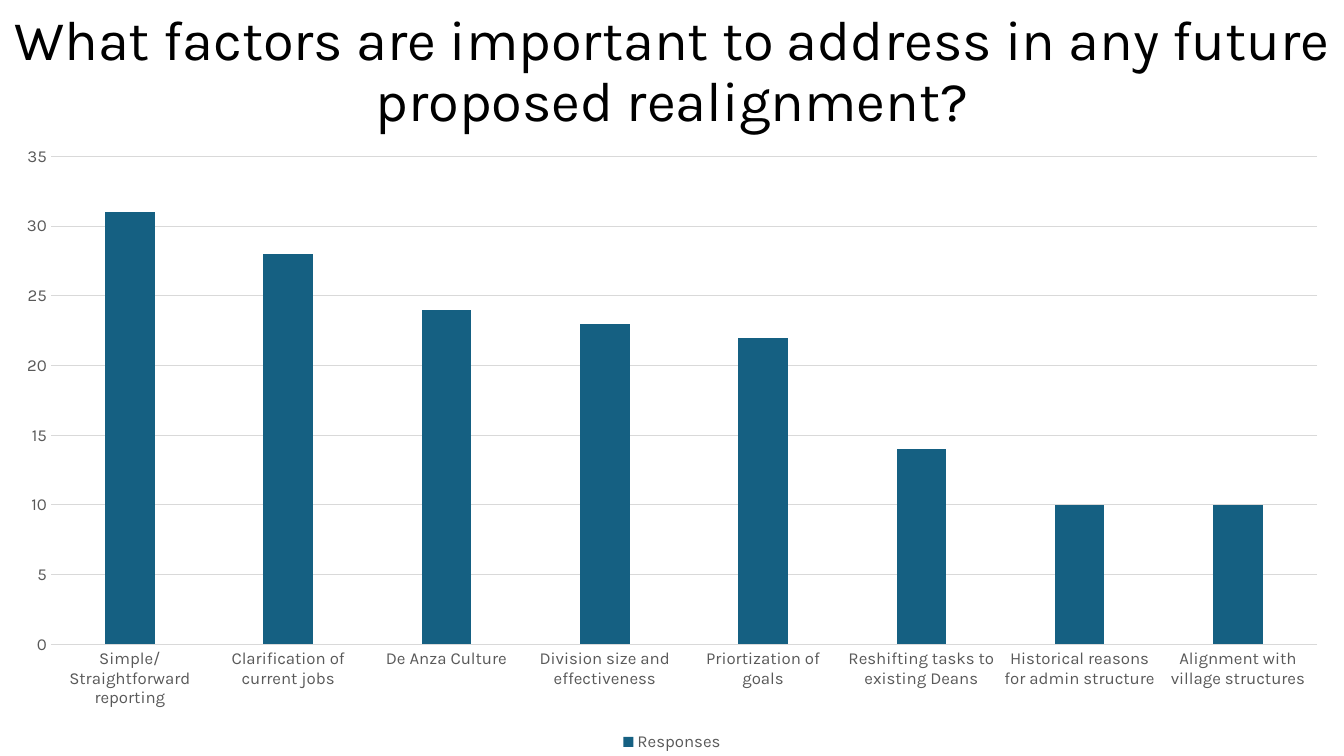
from lxml import etree
from pptx import Presentation
from pptx.chart.data import CategoryChartData
from pptx.dml.color import RGBColor
from pptx.enum.chart import XL_CHART_TYPE as ChartType
from pptx.enum.chart import XL_LEGEND_POSITION as LegendPosition
from pptx.enum.chart import XL_TICK_MARK as TickMark
from pptx.enum.text import MSO_ANCHOR as Anchor
from pptx.enum.text import PP_ALIGN as Align
from pptx.util import Inches, Pt

WIDTH, HEIGHT = 13.33, 7.5
CHART_TOP = 1.33
RESPONSES = {
    "Simple/Straightforward reporting": 31,
    "Clarification of current jobs": 28,
    "De Anza Culture": 24,
    "Division size and effectiveness": 23,
    "Priortization of goals": 22,
    "Reshifting tasks to existing Deans": 14,
    "Historical reasons for admin structure": 10,
    "Alignment with village structures": 10,
}


def color(value):
    return RGBColor.from_string(value)


class SlideBuilder:
    """Holds the style and the current slide, and adds its elements."""

    font_name = "Karla"
    title_color = "000000"
    label_color = "595959"
    line_color = "D9D9D9"
    bar_color = "156082"

    def __init__(self, slide):
        self.slide = slide

    def style_font(self, font, size, font_color):
        font.name = self.font_name
        font.size = Pt(size)
        font.bold = False
        font.color.rgb = color(font_color)

    def style_line(self, line):
        line.color.rgb = color(self.line_color)
        line.width = Pt(0.75)

    def add_title(self, text, left, top, width, height):
        shape = self.slide.shapes.add_textbox(
            Inches(left), Inches(top), Inches(width), Inches(height))
        frame = shape.text_frame
        frame.word_wrap = True
        frame.vertical_anchor = Anchor.MIDDLE
        frame.text = text
        paragraph = frame.paragraphs[0]
        paragraph.alignment = Align.CENTER
        paragraph.line_spacing = 0.9
        self.style_font(paragraph.runs[0].font, 40, self.title_color)

    def add_column_chart(self, name, values, left, top, width, height):
        data = CategoryChartData()
        data.categories = list(values)
        data.add_series(name, list(values.values()))
        chart = self.slide.shapes.add_chart(
            ChartType.COLUMN_CLUSTERED, Inches(left), Inches(top),
            Inches(width), Inches(height), data).chart
        self.style_font(chart.font, 10, self.title_color)
        chart.has_title = False
        chart.has_legend = True
        chart.legend.position = LegendPosition.BOTTOM
        chart.legend.include_in_layout = False
        self.style_font(chart.legend.font, 12, self.label_color)

        for axis in (chart.category_axis, chart.value_axis):
            axis.major_tick_mark = TickMark.NONE
            axis.minor_tick_mark = TickMark.NONE
            self.style_font(axis.tick_labels.font, 12, self.label_color)
        self.style_line(chart.category_axis.format.line)
        value_axis = chart.value_axis
        value_axis.minimum_scale = 0
        value_axis.maximum_scale = 35
        value_axis.major_unit = 5
        value_axis.format.line.fill.background()
        self.style_line(value_axis.major_gridlines.format.line)

        plot = chart.plots[0]
        plot.gap_width = 219
        plot.overlap = -27
        plot.vary_by_categories = False
        bars = plot.series[0].format
        bars.fill.solid()
        bars.fill.fore_color.rgb = color(self.bar_color)
        bars.line.fill.background()


def main():
    presentation = Presentation()
    presentation.slide_width = Inches(WIDTH)
    presentation.slide_height = Inches(HEIGHT)
    builder = SlideBuilder(
        presentation.slides.add_slide(presentation.slide_layouts[6]))
    builder.add_title(
        "What factors are important to address in any future proposed realignment?",
        0, 0, WIDTH, 1.45)
    builder.add_column_chart(
        "Responses", RESPONSES, 0, CHART_TOP, WIDTH, HEIGHT - CHART_TOP)
    presentation.save("out.pptx")


if __name__ == "__main__":
    main()
